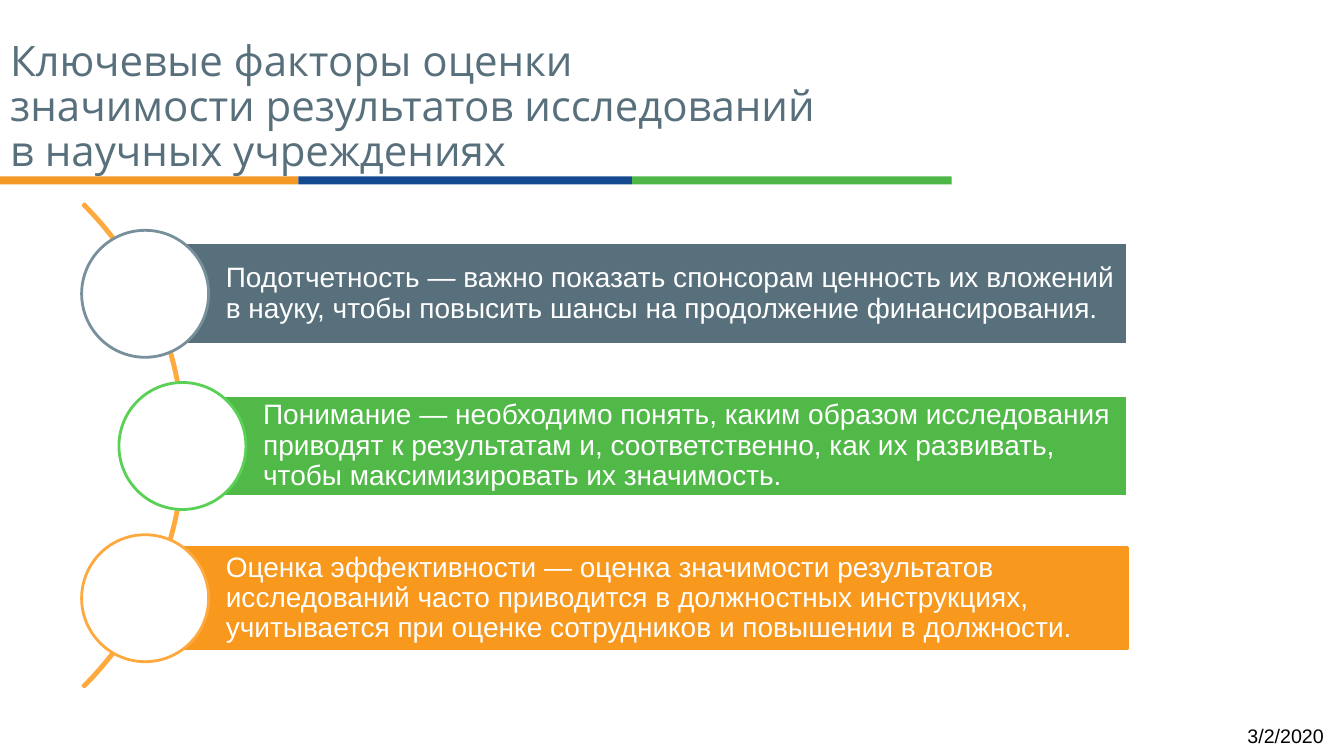
from pptx import Presentation
from pptx.dml.color import RGBColor
from pptx.enum.shapes import MSO_SHAPE
from pptx.enum.text import MSO_ANCHOR, MSO_AUTO_SIZE, PP_ALIGN
from pptx.util import Inches, Pt

HUES = {
    "white": "FFFFFF", "black": "000000", "slate": "586F7C", "steel": "78909C",
    "green": "51B948", "lime": "5AD156", "amber": "F8981D", "peach": "FEA93F",
    "arc": "FFAA3F", "orange": "F49925", "navy": "154A90", "leaf": "4EB748",
}

TITLE = [
    "Ключевые факторы оценки",
    "значимости результатов исследований",
    "в научных учреждениях",
]

STRIPES = [(0, 2.96, "orange"), (2.96, 3.31, "navy"), (6.27, 3.17, "leaf")]

FACTORS = [
    (1.44, "slate", "white", "steel",
     "Подотчетность — важно показать спонсорам ценность их вложений "
     "в науку, чтобы повысить шансы на продолжение финансирования."),
    (1.81, "green", "white", "lime",
     "Понимание — необходимо понять, каким образом исследования "
     "приводят к результатам и, соответственно, как их развивать, "
     "чтобы максимизировать их значимость."),
    (1.44, "amber", "amber", "peach",
     "Оценка эффективности — оценка значимости результатов "
     "исследований часто приводится в должностных инструкциях, "
     "учитывается при оценке сотрудников и повышении в должности."),
]

RIGHT = 11.18
TOP = 2.41
STEP = 1.51
BAR = 1.01
DISC = 1.26


class Deck:
    def __init__(self, font, head):
        self.font = font
        self.head = head
        self.prs = Presentation()
        self.prs.slide_width = Inches(13.33)
        self.prs.slide_height = Inches(7.5)
        self.slide = self.prs.slides.add_slide(self.prs.slide_layouts[5])

    def hue(self, name):
        return RGBColor.from_string(HUES[name])

    def shape(self, kind, box, fill=None, line=None):
        item = self.slide.shapes.add_shape(kind, *map(Inches, box))
        item.shadow.inherit = False
        if fill:
            item.fill.solid()
            item.fill.fore_color.rgb = self.hue(fill)
        else:
            item.fill.background()
        if line:
            item.line.color.rgb = self.hue(line)
            item.line.width = Pt(2)
        else:
            item.line.fill.background()
        return item

    def text(self, item, rows, size, color, font=None, align=PP_ALIGN.LEFT,
             space=0.9, pads=(0.1, 0.05, 0.1, 0.05)):
        frame = item.text_frame
        frame.word_wrap = True
        frame.auto_size = MSO_AUTO_SIZE.NONE
        frame.vertical_anchor = MSO_ANCHOR.MIDDLE
        (frame.margin_left, frame.margin_top,
         frame.margin_right, frame.margin_bottom) = map(Inches, pads)
        para = frame.paragraphs[0]
        para.alignment = align
        para.line_spacing = space
        for i, row in enumerate(rows):
            if i:
                para.add_line_break()
            run = para.add_run()
            run.text = row
            run.font.name = font or self.font
            run.font.size = Pt(size)
            run.font.color.rgb = self.hue(color)

    def title(self, box, rows):
        item = self.slide.shapes.title
        item.left, item.top, item.width, item.height = map(Inches, box)
        self.text(item, rows, 30, "slate", self.head)

    def arc(self, box, turns):
        item = self.shape(MSO_SHAPE.BLOCK_ARC, box, line="arc")
        for i, turn in enumerate(turns):
            item.adjustments[i] = turn

    def factor(self, left, top, fill, edge, ring, words):
        box = (left, top, RIGHT - left, BAR)
        bar = self.shape(MSO_SHAPE.RECTANGLE, box, fill, edge)
        self.text(bar, [words], 20, "white", pads=(0.8, 0.06, 0.06, 0.06))
        disc = (left - DISC / 2, top + (BAR - DISC) / 2, DISC, DISC)
        self.shape(MSO_SHAPE.OVAL, disc, "white", ring)

    def date(self, box, words):
        item = self.slide.shapes.add_textbox(*map(Inches, box))
        self.text(item, [words], 14, "black", align=PP_ALIGN.RIGHT, space=1.0)


def main():
    deck = Deck("Arial", "Open Sans")
    for left, width, fill in STRIPES:
        deck.shape(MSO_SHAPE.RECTANGLE, (left, 1.75, width, 0.08), fill)
    deck.title((0, 0.48, 8.99, 1.18), TITLE)
    deck.arc((-4.95, 1.03, 6.78, 6.78), (189, 27, 0.003))
    for i, (left, *rest) in enumerate(FACTORS):
        deck.factor(left, TOP + i * STEP, *rest)
    deck.date((10.23, 7.1, 3, 0.4), "3/2/2020")
    deck.prs.save("out.pptx")


if __name__ == "__main__":
    main()
